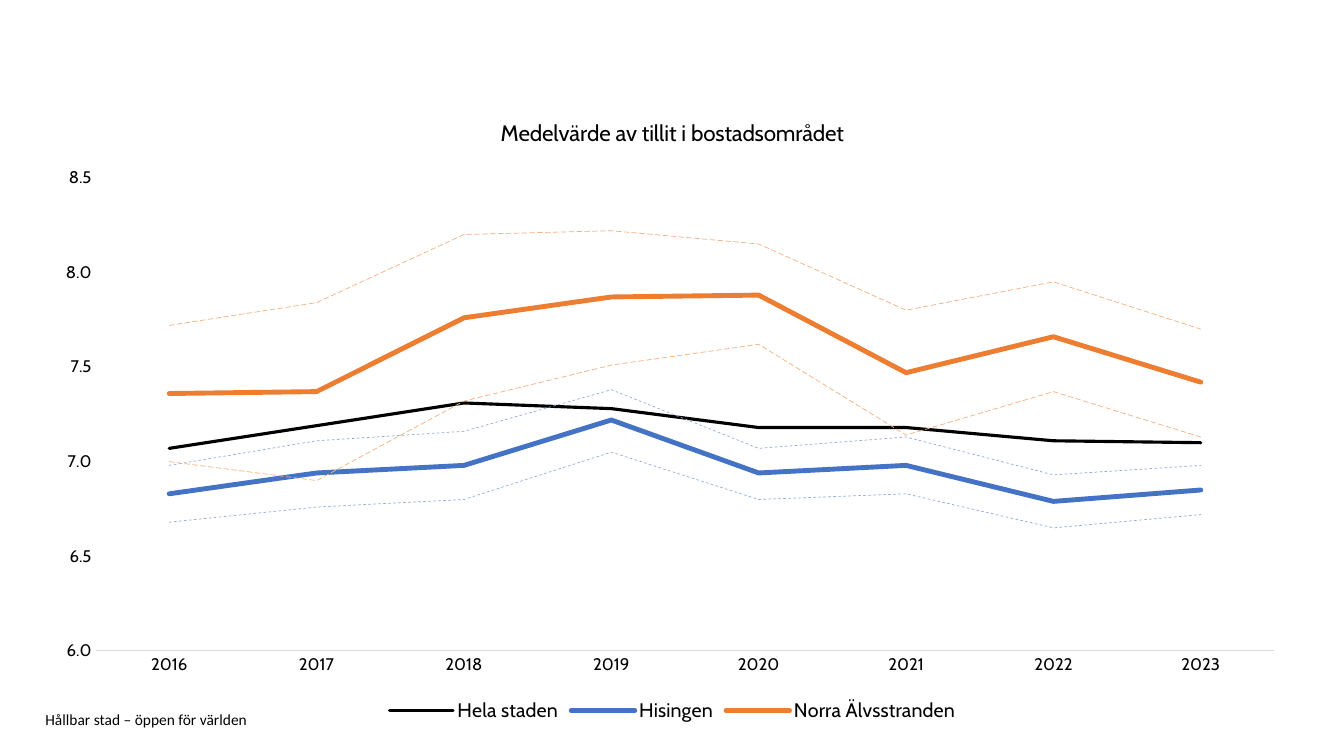
from pptx import Presentation
from pptx import oxml
from pptx import util as u
from pptx.chart import data
from pptx.dml import color
from pptx.enum import chart as ch, dml, text

NS = 'xmlns:c="http://schemas.openxmlformats.org/drawingml/2006/chart"'


def rgb(hex_color):
    return color.RGBColor.from_string(hex_color)


def add_text(p, content, size=12, font="Cabin", fill="000000"):
    r = p.add_run()
    r.text = content
    r.font.size = u.Pt(size)
    r.font.name = font
    r.font.bold = False
    r.font.color.rgb = rgb(fill)
    return r


prs = Presentation()
prs.slide_width = u.Inches(13.33)
prs.slide_height = u.Inches(7.5)
s = prs.slides.add_slide(prs.slide_layouts[6])

sp = s.shapes.add_textbox(u.Inches(0.45), u.Inches(7.06), u.Inches(9.45), u.Inches(0.16))
tf = sp.text_frame
tf.word_wrap = True
tf.margin_left = tf.margin_right = tf.margin_top = tf.margin_bottom = 0
tf.vertical_anchor = text.MSO_ANCHOR.MIDDLE
add_text(tf.paragraphs[0], "Hållbar stad – öppen för världen", size=11, font="Calibri")

DASH, LONG_DASH = dml.MSO_LINE.DASH, dml.MSO_LINE.LONG_DASH
series = [
    ("Hela staden", "000000", 2.25, None, (7.07, 7.19, 7.31, 7.28, 7.18, 7.18, 7.11, 7.1)),
    ("Hisingen", "4472C4", 3.5, None, (6.83, 6.94, 6.98, 7.22, 6.94, 6.98, 6.79, 6.85)),
    ("Hisingen, nedre", "8FAADC", 0.5, DASH, (6.68, 6.76, 6.8, 7.05, 6.8, 6.83, 6.65, 6.72)),
    ("Hisingen, övre", "8FAADC", 0.5, DASH, (6.98, 7.11, 7.16, 7.38, 7.07, 7.13, 6.93, 6.98)),
    ("Norra Älvsstranden", "ED7D31", 3.5, None, (7.36, 7.37, 7.76, 7.87, 7.88, 7.47, 7.66, 7.42)),
    ("Norra Älvsstranden, nedre", "F4B183", 0.5, LONG_DASH, (7, 6.9, 7.32, 7.51, 7.62, 7.14, 7.37, 7.13)),
    ("Norra Älvsstranden, övre", "F4B183", 0.5, LONG_DASH, (7.72, 7.84, 8.2, 8.22, 8.15, 7.8, 7.95, 7.7)),
]
cd = data.CategoryChartData(number_format="0.00")
cd.categories = [str(year) for year in range(2016, 2024)]
for name, _, _, _, values in series:
    cd.add_series(name, values)

chart = s.shapes.add_chart(
    ch.XL_CHART_TYPE.LINE, u.Inches(0.45), u.Inches(0.95), u.Inches(12.44), u.Inches(6.26), cd
).chart
chart.font.size = u.Pt(12)
chart.font.name = "Cabin"
chart.font.color.rgb = rgb("000000")
chart.has_title = True
add_text(chart.chart_title.text_frame.paragraphs[0], "Medelvärde av tillit i bostadsområdet", size=16)
chart.chart_title.include_in_layout = False

chart.plots[0].vary_by_categories = False
for ser, (_, fill, width, dash, _) in zip(chart.plots[0].series, series):
    ser.smooth = False
    ser.marker.style = ch.XL_MARKER_STYLE.NONE
    ser.format.line.color.rgb = rgb(fill)
    ser.format.line.width = u.Pt(width)
    if dash:
        ser.format.line.dash_style = dash
for ln in chart.element.xpath(".//c:ser/c:spPr/a:ln"):
    ln.set("cap", "rnd")

for axis in (chart.category_axis, chart.value_axis):
    axis.has_major_gridlines = False
    axis.major_tick_mark = axis.minor_tick_mark = ch.XL_TICK_MARK.NONE
chart.category_axis.format.line.color.rgb = rgb("D9D9D9")
chart.category_axis.format.line.width = u.Pt(0.75)
va = chart.value_axis
va.minimum_scale, va.maximum_scale, va.major_unit = 6, 8.5, 0.5
va.tick_labels.number_format = "0.0"
va.tick_labels.number_format_is_linked = False
va.format.line.fill.background()

chart.has_legend = True
chart.legend.position = ch.XL_LEGEND_POSITION.BOTTOM
chart.legend.include_in_layout = False
chart.legend.font.size = u.Pt(14)
chart.legend.font.name = "Cabin"
chart.legend.font.color.rgb = rgb("000000")
legend_pos = chart.element.xpath(".//c:legend/c:legendPos")[0]
for i in reversed(range(len(series))):
    if series[i][3]:
        legend_pos.addnext(oxml.parse_xml(
            f'<c:legendEntry {NS}><c:idx val="{i}"/><c:delete val="1"/></c:legendEntry>'))

plot_area = chart.element.xpath(".//c:plotArea")[0]
for layout in plot_area.xpath("./c:layout"):
    plot_area.remove(layout)
frame = "".join(f'<c:{k} val="{v}"/>' for k, v in (("x", 0.04), ("y", 0.13), ("w", 0.94), ("h", 0.75)))
plot_area.insert(0, oxml.parse_xml(
    f'<c:layout {NS}><c:manualLayout><c:layoutTarget val="inner"/>'
    f'<c:xMode val="edge"/><c:yMode val="edge"/>{frame}</c:manualLayout></c:layout>'))

prs.save("out.pptx")
